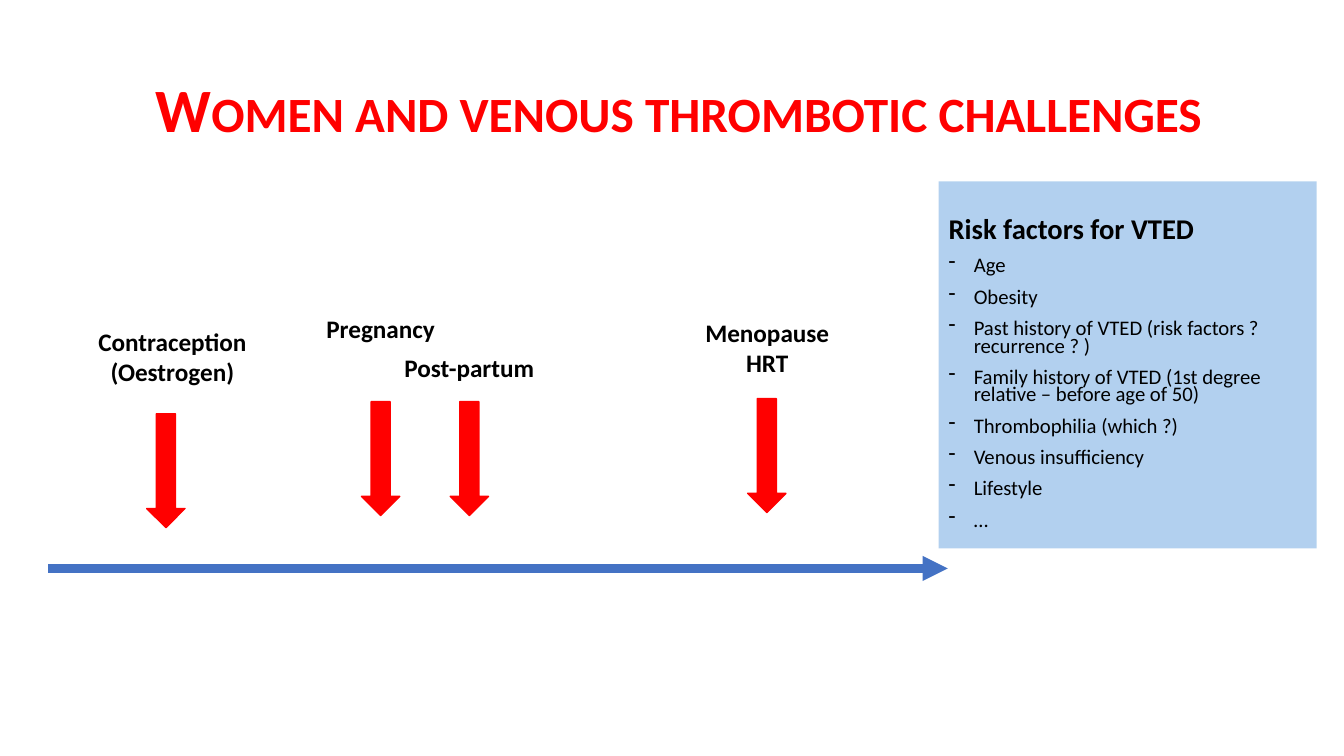
"""Build a slide on venous thrombotic challenges across a woman's life."""
from dataclasses import dataclass

import lxml.etree
import pptx
import pptx.dml.color
import pptx.enum.dml
import pptx.enum.shapes
import pptx.enum.text
import pptx.oxml.ns
import pptx.shapes.autoshape
import pptx.slide
import pptx.text.text
import pptx.util

Inches = pptx.util.Inches
Pt = pptx.util.Pt
RGB = pptx.dml.color.RGBColor
Shape = pptx.enum.shapes.MSO_SHAPE
Align = pptx.enum.text.PP_ALIGN
qn = pptx.oxml.ns.qn


@dataclass(frozen=True)
class Theme:
    """Colours, font and type sizes of the slide."""
    font: str = "Calibri"
    red: RGB = RGB(0xFF, 0x00, 0x00)
    black: RGB = RGB(0x00, 0x00, 0x00)
    timeline: RGB = RGB(0x44, 0x72, 0xC4)
    panel: RGB = RGB(0x00, 0x66, 0xCC)
    panel_opacity: int = 30
    title_size: float = 44
    stage_size: float = 18
    heading_size: float = 20.4
    factor_size: float = 14.8


@dataclass(frozen=True)
class Box:
    """A rectangle in inches."""
    left: float
    top: float
    width: float
    height: float

    def emu(self) -> tuple[int, int, int, int]:
        """Return the rectangle as lengths for the library."""
        return (Inches(self.left), Inches(self.top),
                Inches(self.width), Inches(self.height))


@dataclass(frozen=True)
class Stage:
    """A stage of life with its label and its arrow."""
    lines: tuple[str, ...]
    label: Box
    arrow_left: float
    arrow_top: float


THEME = Theme()
ARROW_LENGTH, ARROW_THICKNESS = 1.13, 0.38
TITLE = "Women and venous thrombotic challenges"
STAGES = (
    Stage(("Contraception", "(Oestrogen)"), Box(0.84, 3.19, 1.74, 0.71), 1.08, 4.48),
    Stage(("Pregnancy",), Box(3.13, 3.06, 1.29, 0.4), 3.21, 4.36),
    Stage(("Post-partum",), Box(3.9, 3.45, 1.51, 0.4), 4.09, 4.36),
    Stage(("Menopause", "HRT"), Box(6.89, 3.1, 1.44, 0.71), 7.04, 4.33),
)
RISK_HEADING = "Risk factors for VTED"
RISK_FACTORS = (
    "Age",
    "Obesity",
    "Past history of VTED (risk factors ? recurrence ? )",
    "Family history of VTED (1st degree relative – before age of 50)",
    "Thrombophilia (which ?)",
    "Venous insufficiency",
    "Lifestyle",
    "…",
)


def set_font(paragraph: pptx.text.text._Paragraph, size: float, color: RGB, bold: bool) -> None:
    """Set the font of a whole paragraph."""
    font = paragraph.font
    font.name, font.size, font.bold = THEME.font, Pt(size), bold
    font.color.rgb = color


def add_filled(slide: pptx.slide.Slide, kind: Shape, box: Box,
               color: RGB) -> pptx.shapes.autoshape.Shape:
    """Add a flat preset shape without a shadow."""
    shape = slide.shapes.add_shape(kind, *box.emu())
    shape.shadow.inherit = False
    shape.fill.solid()
    shape.fill.fore_color.rgb = color
    return shape


def add_title(slide: pptx.slide.Slide) -> None:
    """Add the title in small capitals."""
    frame = slide.shapes.add_textbox(*Box(0.52, 0.39, 12.42, 1.45).emu()).text_frame
    frame.word_wrap = True
    frame.vertical_anchor = pptx.enum.text.MSO_ANCHOR.MIDDLE
    paragraph = frame.paragraphs[0]
    run = paragraph.add_run()
    run.text = TITLE
    run._r.get_or_add_rPr().set("cap", "small")
    paragraph.alignment = Align.CENTER
    paragraph.line_spacing = 0.9
    set_font(paragraph, THEME.title_size, THEME.red, True)


def add_timeline(slide: pptx.slide.Slide) -> None:
    """Add the long arrow of time."""
    timeline = slide.shapes.add_connector(
        pptx.enum.shapes.MSO_CONNECTOR.STRAIGHT,
        Inches(0.48), Inches(5.64), Inches(9.4), Inches(5.64))
    timeline.line.color.rgb = THEME.timeline
    timeline.line.width = Pt(6)
    lxml.etree.SubElement(timeline.line._get_or_add_ln(), qn("a:tailEnd"), type="triangle")
    lxml.etree.SubElement(timeline._element.spPr, qn("a:effectLst"))


def add_stage(slide: pptx.slide.Slide, stage: Stage) -> None:
    """Add the arrow and the label of one stage."""
    arrow = add_filled(
        slide, Shape.RIGHT_ARROW,
        Box(stage.arrow_left, stage.arrow_top, ARROW_LENGTH, ARROW_THICKNESS), THEME.red)
    arrow.rotation = 90
    arrow.line.color.rgb = THEME.red
    arrow.line.width = Pt(1)
    frame = slide.shapes.add_textbox(*stage.label.emu()).text_frame
    frame.word_wrap = False
    frame.auto_size = pptx.enum.text.MSO_AUTO_SIZE.SHAPE_TO_FIT_TEXT
    frame.text = "\n".join(stage.lines)
    for paragraph in frame.paragraphs:
        paragraph.alignment = Align.CENTER
        set_font(paragraph, THEME.stage_size, THEME.black, True)


def add_risk_panel(slide: pptx.slide.Slide) -> None:
    """Add the tinted panel that lists the risk factors."""
    panel = add_filled(slide, Shape.RECTANGLE, Box(9.31, 1.8, 3.75, 3.64), THEME.panel)
    panel.line.fill.background()
    tint = panel._element.spPr.find(qn("a:solidFill"))[0]
    lxml.etree.SubElement(tint, qn("a:alpha"), val=str(THEME.panel_opacity * 1000))
    frame = panel.text_frame
    frame.word_wrap = True
    frame.vertical_anchor = pptx.enum.text.MSO_ANCHOR.TOP
    frame.margin_top = Inches(0.29)
    heading = frame.paragraphs[0]
    heading.text = RISK_HEADING
    heading.alignment = Align.LEFT
    set_font(heading, THEME.heading_size, THEME.black, True)
    for factor in RISK_FACTORS:
        paragraph = frame.add_paragraph()
        paragraph.text = factor
        paragraph.alignment = Align.LEFT
        paragraph.line_spacing = 0.7
        paragraph.space_before = Pt(10)
        properties = paragraph._p.get_or_add_pPr()
        properties.set("marL", str(Inches(0.25)))
        properties.set("indent", str(Inches(-0.25)))
        lxml.etree.SubElement(properties, qn("a:buChar"), char="-")
        set_font(paragraph, THEME.factor_size, THEME.black, False)


def main() -> None:
    """Build and save the slide."""
    deck = pptx.Presentation()
    deck.slide_width, deck.slide_height = Inches(13.33), Inches(7.5)
    slide = deck.slides.add_slide(deck.slide_layouts[6])
    add_title(slide)
    add_timeline(slide)
    for stage in STAGES:
        add_stage(slide, stage)
    add_risk_panel(slide)
    deck.save("out.pptx")


if __name__ == "__main__":
    main()
